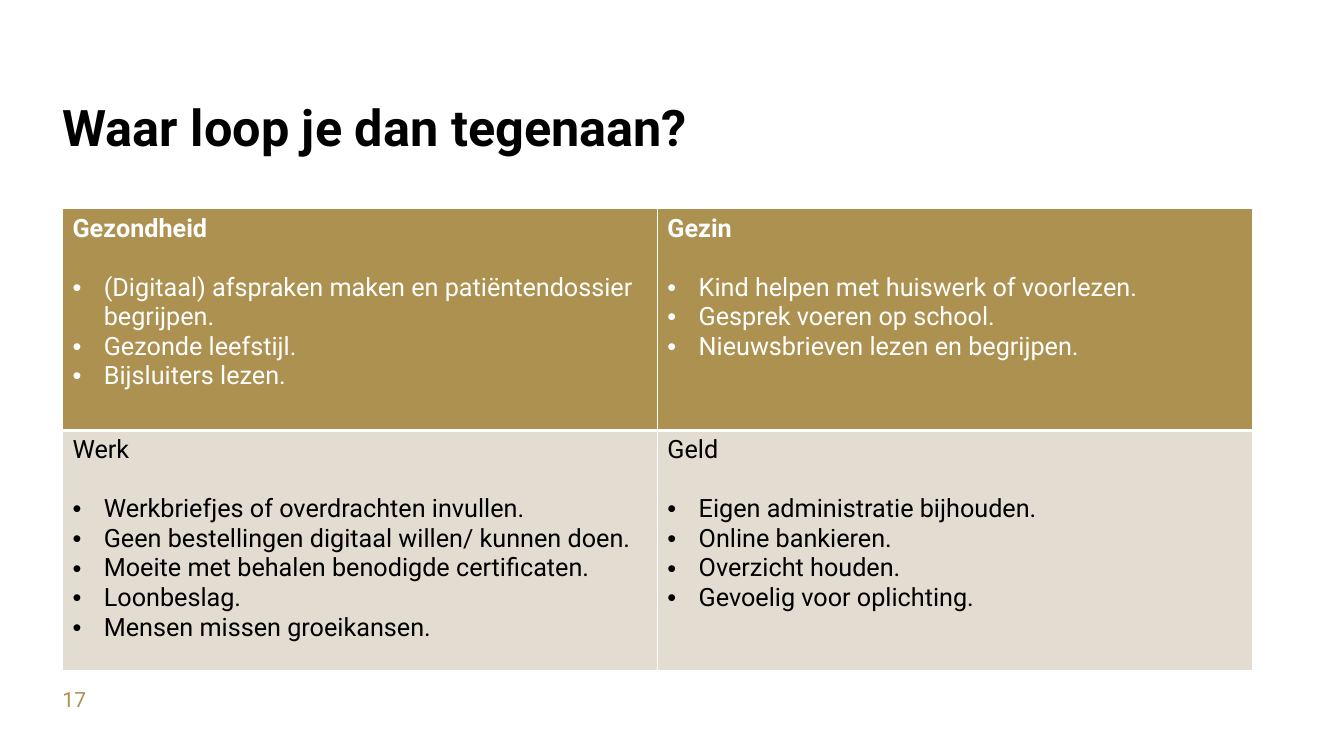
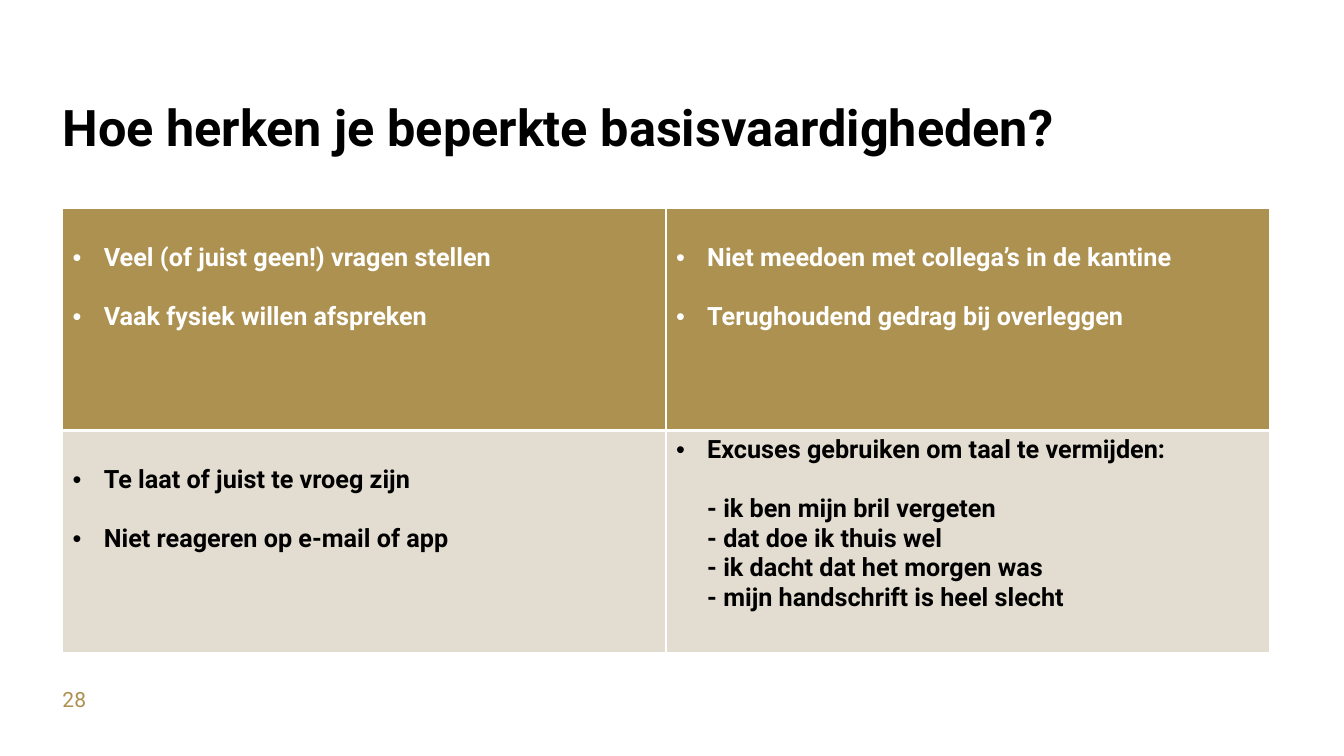
from dataclasses import dataclass

from lxml import etree
from pptx import Presentation
from pptx.dml.color import RGBColor
from pptx.enum.text import MSO_ANCHOR, MSO_AUTO_SIZE, PP_ALIGN
from pptx.oxml.ns import qn
from pptx.util import Inches, Pt

LEFT, TOP = PP_ALIGN.LEFT, MSO_ANCHOR.TOP
FIXED = MSO_AUTO_SIZE.NONE
FONT = "Roboto"
GOLD, SAND, WHITE, BLACK = "AD9150", "E3DCD0", "FFFFFF", "000000"
ROWS = [(GOLD, WHITE), (SAND, BLACK)]  # fill and text of each table row
EDGE = 0.62
GAP = 21  # one line of table text, in points
HEAD, BULLET, INDENT = range(3)


@dataclass
class Line:
    text: str
    kind: int = BULLET
    bold: bool = False
    gap: int = 0


def color(code):
    return RGBColor.from_string(code)


def topic(head, bold, *items):
    """A heading, a gap and a list of bullets."""
    points = [Line(text, gap=0 if i else GAP) for i, text in enumerate(items)]
    return [Line(head, HEAD, bold)] + points


def signs(*items):
    """Bold bullets set one line apart."""
    return [Line(text, bold=True, gap=GAP if i else 0)
            for i, text in enumerate(items)]


class Deck:
    def __init__(self):
        self.prs = Presentation()
        self.prs.slide_width = Inches(13.33)
        self.prs.slide_height = Inches(7.5)
        self.slide = None

    def style(self, para, size, tint, bold=False):
        font = para.font
        font.name, font.size, font.bold = FONT, Pt(size), bold
        font.color.rgb = color(tint)
        para.alignment = LEFT

    def frame(self, shape, text):
        """Set text in a box without margins."""
        frame = shape.text_frame
        frame.text = text
        frame.word_wrap, frame.auto_size = True, FIXED
        frame.vertical_anchor = TOP
        frame.margin_left = frame.margin_right = 0
        frame.margin_top = frame.margin_bottom = 0
        return frame.paragraphs[0]

    def page(self, title, number):
        """Start a slide with its title and page number."""
        self.slide = self.prs.slides.add_slide(self.prs.slide_layouts[5])
        box = self.slide.shapes.title
        box.left, box.top = Inches(EDGE), Inches(1.02)
        box.width, box.height = Inches(12.06), Inches(0.56)
        para = self.frame(box, title)
        para.line_spacing = 0.9
        self.style(para, 36, BLACK, True)
        note = self.slide.shapes.add_textbox(
            Inches(EDGE), Inches(6.81), Inches(0.84), Inches(0.33))
        self.style(self.frame(note, str(number)), 15, GOLD)

    def border(self, cell, row):
        """White cell lines, with a thick one between the rows."""
        props = cell._tc.get_or_add_tcPr()
        thick = "lnT" if row else "lnB"
        for i, side in enumerate(("lnL", "lnR", "lnT", "lnB")):
            line = etree.Element(qn("a:" + side))
            line.set("w", str(Pt(3 if side == thick else 1)))
            fill = etree.SubElement(line, qn("a:solidFill"))
            etree.SubElement(fill, qn("a:srgbClr")).set("val", WHITE)
            props.insert(i, line)

    def fill_line(self, para, line, tint):
        """Set one line of a table cell, with its indent and bullet."""
        para.text = line.text
        self.style(para, 18, tint, line.bold)
        para.space_before = Pt(line.gap)
        if line.kind == HEAD:
            return
        props = para._p.get_or_add_pPr()
        props.set("marL", str(Inches(0.31)))
        if line.kind == BULLET:
            props.set("indent", str(Inches(-0.31)))
            face = etree.Element(qn("a:buFont"))
            face.set("typeface", "Arial")
            mark = etree.Element(qn("a:buChar"))
            mark.set("char", "•")
            # Bullets stand after the spacing and before the font
            spot = props.index(props.find(qn("a:spcBef"))) + 1
            props.insert(spot, face)
            props.insert(spot + 1, mark)

    def table(self, width, heights, cells, lowered=()):
        """Two by two table; lowered cells start one line down."""
        table = self.slide.shapes.add_table(
            2, 2, Inches(EDGE), Inches(2.07),
            Inches(width), Inches(sum(heights))).table
        table.first_row = table.horz_banding = False
        for row, (fill, tint) in enumerate(ROWS):
            table.rows[row].height = Inches(heights[row])
            for col in range(2):
                cell = table.cell(row, col)
                cell.fill.solid()
                cell.fill.fore_color.rgb = color(fill)
                self.border(cell, row)
                if (row, col) in lowered:
                    cell.margin_top = Inches(0.05) + Pt(GAP)
                frame = cell.text_frame
                for i, line in enumerate(cells[row][col]):
                    para = frame.add_paragraph() if i else frame.paragraphs[0]
                    self.fill_line(para, line, tint)


def main():
    deck = Deck()

    # Obstacles in four areas of life
    deck.page("Waar loop je dan tegenaan?", 17)
    deck.table(11.8, (2.2, 2.38), [
        [topic("Gezondheid", True,
               "(Digitaal) afspraken maken en patiëntendossier begrijpen.",
               "Gezonde leefstijl.",
               "Bijsluiters lezen."),
         topic("Gezin", True,
               "Kind helpen met huiswerk of voorlezen.",
               "Gesprek voeren op school.",
               "Nieuwsbrieven lezen en begrijpen.")],
        [topic("Werk", False,
               "Werkbriefjes of overdrachten invullen.",
               "Geen bestellingen digitaal willen/ kunnen doen.",
               "Moeite met behalen benodigde certificaten.",
               "Loonbeslag.",
               "Mensen missen groeikansen."),
         topic("Geld", False,
               "Eigen administratie bijhouden.",
               "Online bankieren.",
               "Overzicht houden.",
               "Gevoelig voor oplichting.")],
    ])

    # Signs of limited basic skills
    deck.page("Hoe herken je beperkte basisvaardigheden?", 28)
    excuses = ["- ik ben mijn bril vergeten", "- dat doe ik thuis wel",
               "- ik dacht dat het morgen was",
               "- mijn handschrift is heel slecht"]
    deck.table(11.97, (2.2, 2.2), [
        [signs("Veel (of juist geen!) vragen stellen",
               "Vaak fysiek willen afspreken"),
         signs("Niet meedoen met collega’s in de kantine",
               "Terughoudend gedrag bij overleggen")],
        [signs("Te laat of juist te vroeg zijn",
               "Niet reageren op e-mail of app"),
         signs("Excuses gebruiken om taal te vermijden:")
         + [Line(text, INDENT, True, 0 if i else GAP)
            for i, text in enumerate(excuses)]],
    ], lowered=[(0, 0), (0, 1), (1, 0)])

    deck.prs.save("out.pptx")


if __name__ == "__main__":
    main()
